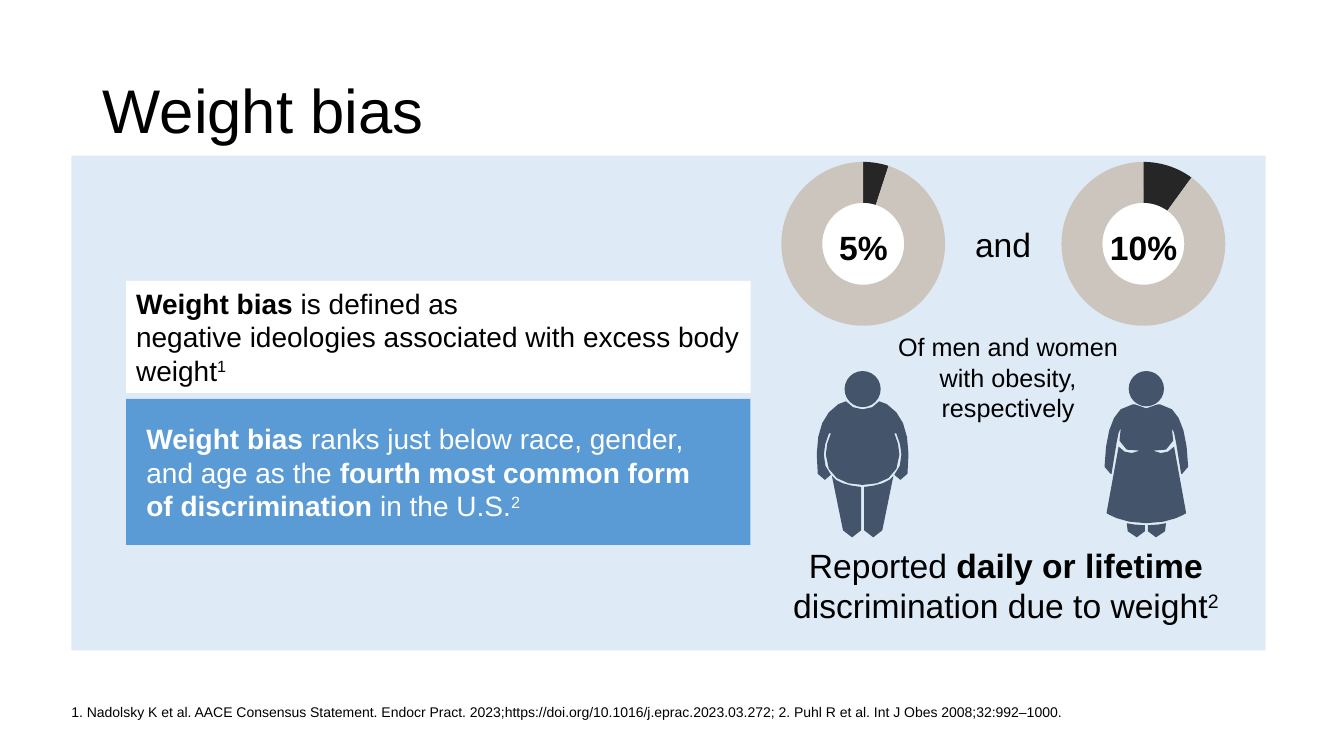
from math import dist

from pptx import Presentation
from pptx.chart.data import CategoryChartData
from pptx.dml.color import RGBColor
from pptx.enum.chart import XL_CHART_TYPE
from pptx.enum.shapes import MSO_SHAPE
from pptx.enum.text import MSO_ANCHOR, PP_ALIGN
from pptx.oxml import parse_xml
from pptx.util import Cm, Pt

FONT = "Arial"
BLACK, WHITE, PANEL, BLUE = "000000", "FFFFFF", "DEEBF7", "5B9BD5"
DARK, SAND, SLATE = "262626", "CCC5BD", "44546A"

TITLE = [("Weight bias", "")]
DEFINITION = [
    ("Weight bias", "b"),
    (" is defined as \nnegative ideologies associated with excess body weight", ""),
    ("1", "^"),
]
RANKING = [
    ("Weight bias ", "b"),
    ("ranks just below race, gender, and age as the ", ""),
    ("fourth most common form \nof discrimination", "b"),
    (" in the U.S.", ""),
    ("2", "^"),
]
REPORTED = [
    ("Reported ", ""),
    ("daily or lifetime ", "b"),
    ("discrimination due to weight", ""),
    ("2", "^"),
]
AND = [("and", "")]
GROUPS = [("Of men and women with obesity, respectively", "")]
SOURCES = [(
    "1. Nadolsky K et al. AACE Consensus Statement. Endocr Pract. "
    "2023;https://doi.org/10.1016/j.eprac.2023.03.272; "
    "2. Puhl R et al. Int J Obes 2008;32:992–1000.", "")]

SHARES = [(5, 21.76), (10, 28.82)]
RING_Y = 6.15

UNIT = 0.0254
FIGURE_TOP = 9.35
MAN = {
    "axis": 21.74, "head": 0.91,
    "body": [
        (0, 38), (7, 38, 13, 35, 16.5, 30), (20.5, 31, 27, 33, 33.5, 41),
        (44, 53, 47.5, 74, 44.5, 102), (43.5, 105, 41.5, 108, 37.5, 108),
        (34.5, 107, 32.5, 105, 31.5, 103), (36.5, 98, 38.5, 91, 38.5, 83),
        (38.5, 76, 36.5, 69, 33.5, 62), (31.5, 62),
        (34.5, 68, 36.5, 76, 36.5, 83), (36.5, 105, 19.5, 113, 0, 113),
    ],
    "leg": [
        (30.5, 104), (19.5, 158), (19.5, 161, 15.5, 165, 10.5, 165),
        (5.5, 165, 1.5, 161, 1.5, 158), (1.5, 115),
        (11.5, 114, 20.5, 112, 26.5, 108), (27.5, 107, 29.5, 105, 30.5, 104),
    ],
}
WOMAN = {
    "axis": 28.89, "head": 0.89,
    "body": [
        (0, 37), (4.5, 37, 8.5, 35, 11.5, 33), (13.5, 33),
        (13.5, 33, 19.5, 33, 25.5, 38), (35.5, 47, 40.5, 66, 41.5, 95),
        (41.5, 99, 38.5, 102, 35.5, 102), (34.5, 102), (29.5, 71),
        (29.5, 67, 29.5, 64, 27.5, 61), (27.5, 59, 26.5, 58, 25.5, 57),
        (25.5, 58), (29.5, 65, 26.5, 74, 19.5, 78),
        (15.5, 80, 10.5, 80, 6.5, 79), (11.5, 82, 17.5, 82, 21.5, 80),
        (24.5, 79, 26.5, 77, 27.5, 75), (39.5, 141),
        (39.5, 141, 25.5, 151, 0, 151),
    ],
    "leg": [
        (1.5, 159), (1.5, 162, 5.5, 165, 9.5, 165),
        (14.5, 165, 18.5, 162, 18.5, 159), (19.5, 151),
        (14.5, 152, 8.5, 153, 1.5, 153),
    ],
}

prs = Presentation()
prs.slide_width, prs.slide_height = Cm(33.87), Cm(19.05)
s = prs.slides.add_slide(prs.slide_layouts[6])


def paint(fill, color):
    fill.solid()
    fill.fore_color.rgb = RGBColor.from_string(color)


def finish(sp, color):
    paint(sp.fill, color)
    sp.line.fill.background()
    sp.shadow.inherit = False
    return sp


def add_box(kind, x, y, w, h, color):
    return finish(s.shapes.add_shape(kind, Cm(x), Cm(y), Cm(w), Cm(h)), color)


def add_disc(x, y, size, color):
    return add_box(MSO_SHAPE.OVAL, x - size / 2, y, size, size, color)


def write(sp, runs, size, color=BLACK, align=PP_ALIGN.LEFT,
          anchor=MSO_ANCHOR.TOP, inset=(0.25, 0.13), spacing=None):
    tf = sp.text_frame
    tf.word_wrap = True
    tf.vertical_anchor = anchor
    tf.margin_left = tf.margin_right = Cm(inset[0])
    tf.margin_top = tf.margin_bottom = Cm(inset[1])
    p = tf.paragraphs[0]
    p.alignment = align
    if spacing:
        p.line_spacing = spacing
    for text, style in runs:
        for i, part in enumerate(text.split("\n")):
            if i:
                p.add_line_break()
            r = p.add_run()
            r.text = part
            r.font.name, r.font.size, r.font.bold = FONT, Pt(size), style == "b"
            paint(r.font.fill, color)
            if style == "^":
                r.font._element.set("baseline", "30000")


def add_text(x, y, w, h, runs, size, **options):
    write(s.shapes.add_textbox(Cm(x), Cm(y), Cm(w), Cm(h)), runs, size, **options)


def add_ring(share, x):
    add_disc(x, RING_Y - 1.41, 2.82, WHITE)
    data = CategoryChartData()
    data.categories = ["1", "2"]
    data.add_series("Series 1", (share, 100 - share))
    chart = s.shapes.add_chart(XL_CHART_TYPE.DOUGHNUT, Cm(x - 3.65), Cm(RING_Y - 2.42),
                               Cm(7.29), Cm(4.83), data).chart
    chart.has_legend = chart.has_title = False
    chart.font.name, chart.font.size = FONT, Pt(10)
    points = chart.plots[0].series[0].points
    for i, color in enumerate((DARK, SAND)):
        paint(points[i].format.fill, color)
        points[i].format.line.fill.background()
    space = chart._chartSpace
    space.find(".//{*}holeSize").set("val", "61")
    space.chart.addnext(parse_xml(
        '<c:spPr xmlns:c="http://schemas.openxmlformats.org/drawingml/2006/chart" '
        'xmlns:a="http://schemas.openxmlformats.org/drawingml/2006/main">'
        '<a:noFill/><a:ln><a:noFill/></a:ln></c:spPr>'))
    add_text(x - 1.13, 5.59, 2.26, 1.27, [(f"{share}%", "b")], 24, align=PP_ALIGN.CENTER)


def trace(outline):
    points = [outline[0]]
    for step in outline[1:]:
        if len(step) == 2:
            points.append(step)
            continue
        curve = [points[-1], step[:2], step[2:4], step[4:]]
        pieces = min(4, max(1, round(dist(curve[0], curve[3]) / 10)))
        for k in range(1, pieces + 1):
            t = k / pieces
            weights = ((1 - t) ** 3, 3 * t * (1 - t) ** 2, 3 * t * t * (1 - t), t ** 3)
            points.append(tuple(sum(w * c[a] for w, c in zip(weights, curve)) for a in (0, 1)))
    return points


def mirror(points):
    return [(-x, y) for x, y in reversed(points)]


def add_figure(figure):
    body, leg = trace(figure["body"]), trace(figure["leg"])
    for points in (body + mirror(body)[1:-1], mirror(leg), leg):
        fine = [(x * 100, y * 100) for x, y in points]
        fb = s.shapes.build_freeform(*fine[0], scale=Cm(UNIT) / 100)
        fb.add_line_segments(fine[1:], close=True)
        finish(fb.convert_to_shape(Cm(figure["axis"]), Cm(FIGURE_TOP)), SLATE)
    add_disc(figure["axis"], FIGURE_TOP, figure["head"], SLATE)


add_text(2.34, 1.02, 29.21, 3.68, TITLE, 44, anchor=MSO_ANCHOR.MIDDLE, spacing=0.9)
add_text(1.8, 17.27, 27.58, 0.89, SOURCES, 10, anchor=MSO_ANCHOR.BOTTOM,
         inset=(0, 0), spacing=0.9)
add_box(MSO_SHAPE.RECTANGLE, 1.8, 3.92, 30.1, 12.47, PANEL)
write(add_box(MSO_SHAPE.RECTANGLE, 3.18, 10.05, 15.73, 3.68, BLUE), RANKING, 20,
      color=WHITE, anchor=MSO_ANCHOR.MIDDLE, inset=(0.51, 0))
add_text(18.24, 13.6, 14.22, 2.31, REPORTED, 24, align=PP_ALIGN.CENTER)
for share, x in SHARES:
    add_ring(share, x)
add_text(23.96, 5.5, 2.64, 1.27, AND, 24, align=PP_ALIGN.CENTER)
write(add_box(MSO_SHAPE.RECTANGLE, 3.18, 7.08, 15.74, 2.82, WHITE), DEFINITION, 20)
for figure in (MAN, WOMAN):
    add_figure(figure)
add_text(22.08, 8.23, 6.65, 2.57, GROUPS, 18, align=PP_ALIGN.CENTER)

prs.save("out.pptx")
